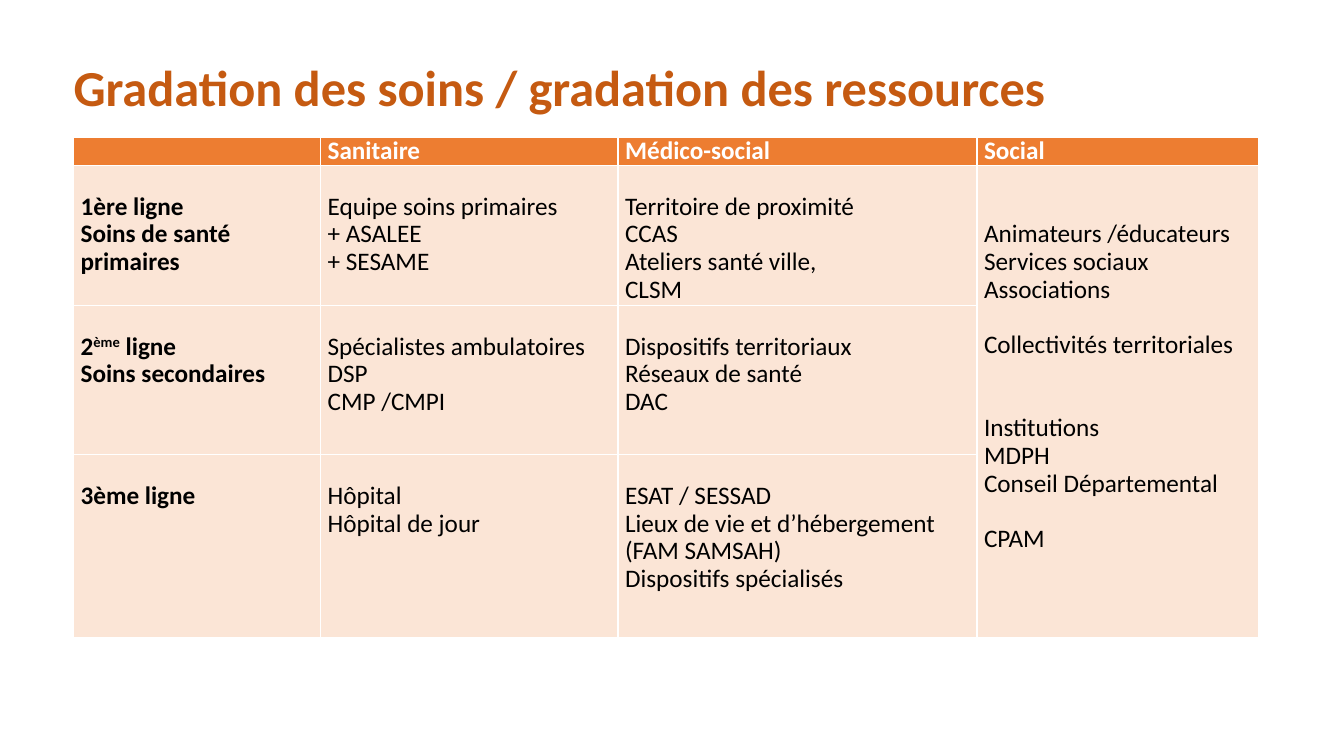
import pptx
import pptx.util
import pptx.dml.color
import pptx.enum.text

# Content: "^" surrounds superscript text
TITLE = "Gradation des soins / gradation des ressources"
HEADERS = ["", "Sanitaire", "Médico-social", "Social"]
LEVELS = [
    (["1ère ligne", "Soins de santé primaires"],
     ["Equipe soins primaires", "+ ASALEE", "+ SESAME"],
     ["Territoire de proximité", "CCAS", "Ateliers santé ville,", "CLSM"]),
    (["2^ème^ ligne", "Soins secondaires"],
     ["Spécialistes ambulatoires", "DSP", "CMP /CMPI"],
     ["Dispositifs territoriaux", "Réseaux de santé", "DAC"]),
    (["3ème ligne"],
     ["Hôpital", "Hôpital de jour"],
     ["ESAT / SESSAD", "Lieux de vie et d’hébergement (FAM SAMSAH)",
      "Dispositifs spécialisés"]),
]
SOCIAL = ["Animateurs /éducateurs", "Services sociaux", "Associations",
          "Collectivités territoriales", "Institutions", "MDPH",
          "Conseil Départemental", "CPAM"]
# Lines of space above the paragraphs that open a group
SOCIAL_GAPS = {"Collectivités territoriales": 1, "Institutions": 2, "CPAM": 1}

# Format, lengths in inches
COLORS = {"title": "C55A11", "header": "ED7D31", "body": "FBE5D6",
          "white": "FFFFFF", "black": "000000"}
FONT = "Calibri"
COLUMNS = [2.45, 2.95, 3.56, 2.79]
ROWS = [0.28, 1.39, 1.48, 1.82]
TABLE_LEFT, TABLE_TOP = 0.73, 1.36
LINE = 0.275
Inches, Pt = pptx.util.Inches, pptx.util.Pt


def rgb(name):
    return pptx.dml.color.RGBColor.from_string(COLORS[name])


def write(frame, lines, size=18, color="black", bold=False, spacing=0.9, gaps=None):
    """Write one paragraph per line, with optional gaps above some of them."""
    for index, line in enumerate(lines):
        paragraph = frame.paragraphs[0] if index == 0 else frame.add_paragraph()
        paragraph.alignment = pptx.enum.text.PP_ALIGN.LEFT
        paragraph.line_spacing = spacing
        paragraph.space_before = Inches(LINE * (gaps or {}).get(line, 0))
        for part, text in enumerate(line.split("^")):
            run = paragraph.add_run()
            run.text = text
            run.font.name, run.font.size, run.font.bold = FONT, Pt(size), bold
            run.font.color.rgb = rgb(color)
            if part % 2:
                run._r.get_or_add_rPr().set("baseline", "30000")


def fill_cell(cell, lines, fill="body", blank_lines=1, **text_format):
    cell.fill.solid()
    cell.fill.fore_color.rgb = rgb(fill)
    cell.margin_left = cell.margin_right = Inches(0.07)
    cell.margin_top, cell.margin_bottom = Inches(LINE * blank_lines), 0
    write(cell.text_frame, lines, **text_format)


presentation = pptx.Presentation()
presentation.slide_width, presentation.slide_height = Inches(13.33), Inches(7.5)
slide = presentation.slides.add_slide(presentation.slide_layouts[5])

# Title
title = slide.shapes.title
title.left, title.top = Inches(0.63), Inches(0.51)
title.width, title.height = Inches(10.17), Inches(0.71)
title.text_frame.vertical_anchor = pptx.enum.text.MSO_ANCHOR.TOP
write(title.text_frame, [TITLE], size=36, color="title", bold=True, spacing=1.0)

# Table grid
table = slide.shapes.add_table(
    len(ROWS), len(COLUMNS), Inches(TABLE_LEFT), Inches(TABLE_TOP),
    Inches(sum(COLUMNS)), Inches(sum(ROWS))).table
table.horz_banding = False
for column, width in zip(table.columns, COLUMNS):
    column.width = Inches(width)
for row, height in zip(table.rows, ROWS):
    row.height = Inches(height)

# Header row
for column, header in enumerate(HEADERS):
    fill_cell(table.cell(0, column), [header], fill="header", blank_lines=0,
              color="white", bold=True)

# Care levels
for row, level in enumerate(LEVELS, start=1):
    for column, lines in enumerate(level):
        fill_cell(table.cell(row, column), lines, bold=column == 0)

# Social column, shared by all levels
social = table.cell(1, 3)
social.merge(table.cell(len(LEVELS), 3))
fill_cell(social, SOCIAL, blank_lines=2, gaps=SOCIAL_GAPS)

presentation.save("out.pptx")
